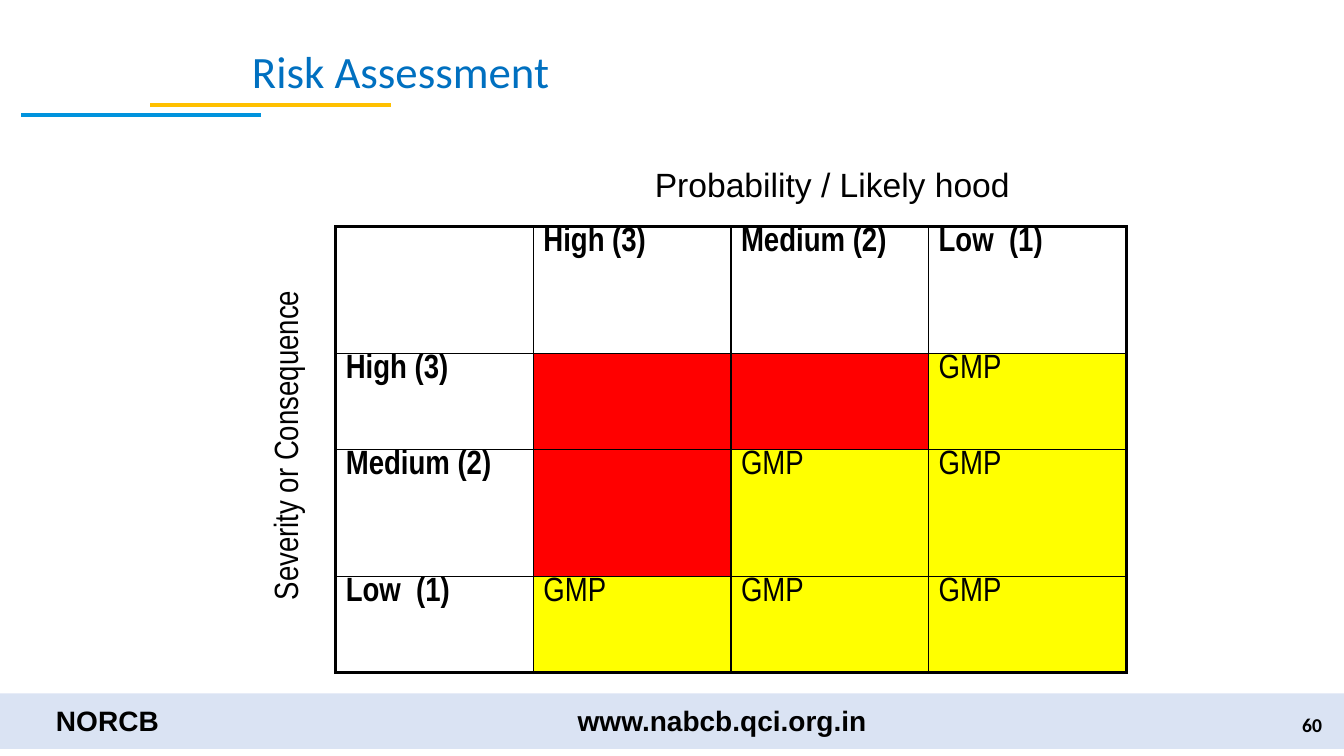
"""Build the risk assessment matrix slide."""
from lxml import etree
from pptx import Presentation
from pptx import util as u
from pptx.dml.color import RGBColor
from pptx.enum import shapes, text
from pptx.oxml import ns

WIDTH, HEIGHT = u.Inches(13.33), u.Inches(7.5)
BLACK, RED, YELLOW = "000000", "FF0000", "FFFF00"
LEVELS = ["High (3)", "Medium (2)", "Low  (1)"]
ROW_SHARES = [16.8, 12.67, 16.8, 12.67]
THIN, THICK = 0.96, 2.21


def color(value):
    """Turn a hex string into a colour."""
    return RGBColor.from_string(value)


def across(share):
    """Turn a percentage of the slide's width into a length."""
    return round(WIDTH * share / 100)


def down(share):
    """Turn a percentage of the slide's height into a length."""
    return round(HEIGHT * share / 100)


def box(left, top, width, height):
    """Turn percentages of the slide into a frame."""
    return across(left), down(top), across(width), down(height)


def style(paragraph, size, font, fill=BLACK, bold=False, align=text.PP_ALIGN.LEFT):
    """Format a whole paragraph."""
    paragraph.alignment = align
    paragraph.font.size = u.Pt(size)
    paragraph.font.name = font
    paragraph.font.bold = bold
    paragraph.font.color.rgb = color(fill)


def add_title(slide, words):
    """Place and format the title placeholder."""
    title = slide.shapes.title
    title.left, title.top, title.width, title.height = box(10.5, 4.13, 84.47, 11.2)
    frame = title.text_frame
    frame.text = words
    frame.margin_left = across(8.25)
    frame.vertical_anchor = text.MSO_ANCHOR.MIDDLE
    frame.paragraphs[0].line_spacing = 0.9
    style(frame.paragraphs[0], 32, "Calibri", "0070C0")


def add_label(slide, words, frame_box, size, font, bold=False,
              align=text.PP_ALIGN.LEFT, anchor=text.MSO_ANCHOR.TOP, rotation=0):
    """Add a one-paragraph text box."""
    label = slide.shapes.add_textbox(*frame_box)
    label.rotation = rotation
    frame = label.text_frame
    frame.word_wrap = True
    frame.vertical_anchor = anchor
    frame.text = words
    style(frame.paragraphs[0], size, font, bold=bold, align=align)


def add_band(slide):
    """Add the translucent footer band."""
    band = slide.shapes.add_shape(shapes.MSO_SHAPE.RECTANGLE, *box(0, 91.73, 100, 7.33))
    band.shadow.inherit = False
    band.line.fill.background()
    band.fill.solid()
    band.fill.fore_color.rgb = color("8FAADC")
    tint = band.fill._xPr.find(".//" + ns.qn("a:srgbClr"))
    etree.SubElement(tint, ns.qn("a:alpha"), val="33000")


def add_rule(slide, start, end, height, fill):
    """Add a horizontal rule under the title."""
    rule = slide.shapes.add_connector(shapes.MSO_CONNECTOR.STRAIGHT, across(start),
                                      down(height), across(end), down(height))
    rule.line.color.rgb = color(fill)
    rule.line.width = u.Pt(3)
    etree.SubElement(rule._element.spPr, ns.qn("a:effectLst"))


def set_borders(cell, widths):
    """Draw black borders given left, right, top and bottom widths."""
    properties = cell._tc.get_or_add_tcPr()
    for side, width in zip("LRTB", widths):
        line = etree.SubElement(properties, ns.qn(f"a:ln{side}"), w=str(u.Pt(width)))
        solid = etree.SubElement(line, ns.qn("a:solidFill"))
        etree.SubElement(solid, ns.qn("a:srgbClr"), val=BLACK)


def fill_cell(cell, words, fill, bold):
    """Set a cell's fill and text."""
    if fill:
        cell.fill.solid()
        cell.fill.fore_color.rgb = color(fill)
    else:
        cell.fill.background()
    if words:
        cell.text = words
        paragraph = cell.text_frame.paragraphs[0]
        paragraph.line_spacing = 0.78
        style(paragraph, 24, "Arial Narrow", bold=bold)


def add_matrix(slide):
    """Add the matrix, red where severity and probability are both large."""
    count = len(LEVELS) + 1
    frame_box = box(24.98, 30, 58.82, sum(ROW_SHARES))
    table = slide.shapes.add_table(count, count, *frame_box).table
    table.first_row = table.horz_banding = False
    for row, share in zip(table.rows, ROW_SHARES):
        row.height = down(share)
    headings = [""] + LEVELS
    for row in range(count):
        for column in range(count):
            cell = table.cell(row, column)
            edges = (column == 0, column == count - 1, row == 0, row == count - 1)
            set_borders(cell, [THICK if edge else THIN for edge in edges])
            if row == 0 or column == 0:
                fill_cell(cell, headings[row + column], None, True)
            elif row + column < count:
                fill_cell(cell, "", RED, False)
            else:
                fill_cell(cell, "GMP", YELLOW, False)


def main():
    """Build and save the slide."""
    presentation = Presentation()
    presentation.slide_width, presentation.slide_height = WIDTH, HEIGHT
    slide = presentation.slides.add_slide(presentation.slide_layouts[5])
    center, right = text.PP_ALIGN.CENTER, text.PP_ALIGN.RIGHT
    middle = text.MSO_ANCHOR.MIDDLE
    add_band(slide)
    add_rule(slide, 1.58, 19.43, 15.2, "0093DD")
    add_rule(slide, 11.18, 29.11, 13.87, "FFC000")
    add_label(slide, "www.nabcb.qci.org.in", box(42.24, 92.4, 24.08, 6.27), 20, "Arial", True)
    add_label(slide, "NORCB", box(1.58, 92.13, 12.83, 6.27), 20, "Arial", True, center, middle)
    add_label(slide, "60", box(76.59, 93.2, 22.51, 5.33), 14, "Calibri", True, right, middle)
    add_title(slide, "Risk Assessment")
    add_label(slide, "Probability / Likely hood", box(38.78, 21.07, 46.29, 6.67),
              24, "Arial", align=center)
    add_label(slide, "Severity or Consequence", box(4.95, 55.6, 32.48, 6.67),
              24, "Arial Narrow", align=center, rotation=270)
    add_matrix(slide)
    presentation.save("out.pptx")


if __name__ == "__main__":
    main()
